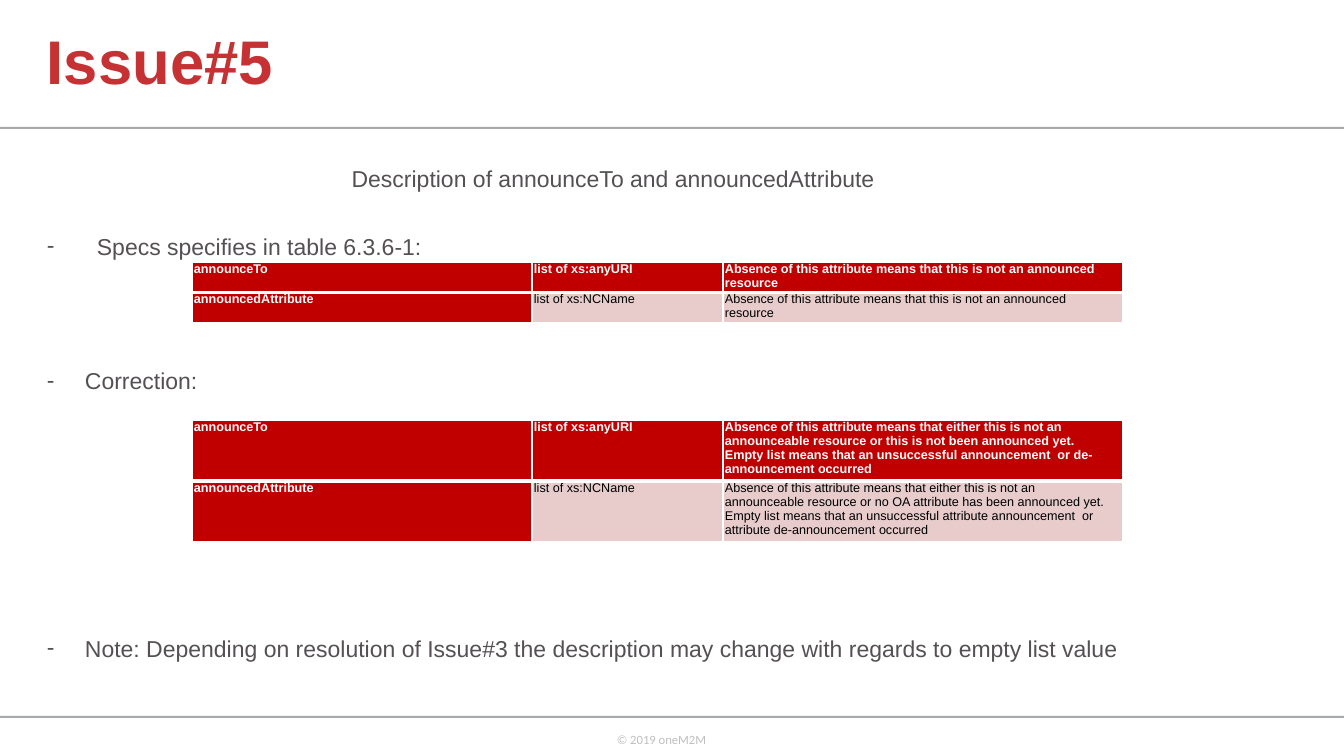
from lxml.etree import SubElement
from pptx import Presentation
from pptx.dml.color import RGBColor
from pptx.enum.shapes import MSO_SHAPE
from pptx.enum.text import MSO_ANCHOR, PP_ALIGN
from pptx.oxml.ns import qn
from pptx.util import Emu, Pt

PX = 914400 / 100.8
TITLE_RED = RGBColor(0xC6, 0x31, 0x33)
CELL_RED = RGBColor(0xC0, 0x00, 0x00)
PINK = RGBColor(0xE8, 0xCC, 0xCC)
WHITE = RGBColor(0xFF, 0xFF, 0xFF)
BLACK = RGBColor(0x00, 0x00, 0x00)
TEXT_GREY = RGBColor(0x54, 0x50, 0x54)
RULE_GREY = RGBColor(0xA7, 0xA9, 0xAC)
FOOTER_GREY = RGBColor(0xBF, 0xBF, 0xBF)


def px(*lengths):
    """Turn pixel lengths into a list of EMU lengths."""
    return [Emu(round(n * PX)) for n in lengths]


def style(p, size, color, bold=False, name="Arial"):
    for r in p.runs:
        r.font.size = Pt(size)
        r.font.name = name
        r.font.bold = bold
        r.font.color.rgb = color


prs = Presentation()
prs.slide_width, prs.slide_height = px(1344, 756)
s = prs.slides.add_slide(prs.slide_layouts[6])

# Rules and footer
for top in (127, 716):
    rule = s.shapes.add_shape(MSO_SHAPE.RECTANGLE, *px(0, top, 1344, 2))
    rule.shadow.inherit = False
    rule.fill.solid()
    rule.fill.fore_color.rgb = RULE_GREY
    rule.line.fill.background()

footer = s.shapes.add_textbox(*px(607, 727, 129, 40))
footer.text_frame.word_wrap = False
footer.text_frame.text = "© 2019 oneM2M"
style(footer.text_frame.paragraphs[0], 9, FOOTER_GREY, name="Calibri")

# Title
title = s.shapes.add_textbox(*px(37, 0, 865, 129))
tf = title.text_frame
tf.word_wrap = True
tf.vertical_anchor = MSO_ANCHOR.MIDDLE
tf.text = "Issue#5"
tf.paragraphs[0].line_spacing = 0.9
style(tf.paragraphs[0], 44, TITLE_RED, bold=True)

# Body: each bullet sits a whole number of line steps below the one before
LINE, STEP = 15.8, 23.8
bullets = [
    (2, 50, "Specs specifies in table 6.3.6-1:"),
    (4, 38, "Correction:"),
    (8, 38, "Note: Depending on resolution of Issue#3 the description may "
            "change with regards to empty list value"),
]
body = s.shapes.add_textbox(*px(37, 164, 1159, 510))
tf = body.text_frame
tf.word_wrap = True
tf.text = "Description of announceTo and announcedAttribute "
tf.paragraphs[0].alignment = PP_ALIGN.CENTER
for steps, indent, text in bullets:
    p = tf.add_paragraph()
    p.text = text
    pPr = p._p.get_or_add_pPr()
    hang = px(indent)[0]
    pPr.set("marL", str(hang))
    pPr.set("indent", str(-hang))
    SubElement(pPr, qn("a:buFont"), typeface="Arial")
    SubElement(pPr, qn("a:buChar"), char="-")
    p.space_before = Pt(round(steps * STEP - LINE, 1))
for p in tf.paragraphs:
    p.line_spacing = 0.84
    style(p, 16.4, TEXT_GREY)

# Attribute tables
COLUMNS = px(340, 191, 400)
NAMES = [("announceTo", "list of xs:anyURI"),
         ("announcedAttribute", "list of xs:NCName")]
absent = "Absence of this attribute means that "
tables = [
    (262, 30, [absent + "this is not an announced resource"] * 2),
    (420, 61, [
        absent + "either this is not an announceable resource or this is not "
        "been announced yet. Empty list means that an unsuccessful "
        "announcement  or de-announcement occurred",
        absent + "either this is not an announceable resource or no OA "
        "attribute has been announced yet. Empty list means that an "
        "unsuccessful attribute announcement  or attribute de-announcement "
        "occurred"]),
]
for top, height, meanings in tables:
    frame = s.shapes.add_table(2, 3, *px(192, top, 931, 2 * height))
    table = frame.table
    table.horz_banding = False
    for column, width in zip(table.columns, COLUMNS):
        column.width = width
    for i, (names, meaning) in enumerate(zip(NAMES, meanings)):
        table.rows[i].height = px(height)[0]
        for j, text in enumerate((*names, meaning)):
            cell = table.cell(i, j)
            heading = i == 0 or j == 0
            cell.margin_left, cell.margin_right = px(2, 7)
            cell.margin_top = cell.margin_bottom = 0
            cell.text = text
            style(cell.text_frame.paragraphs[0], 9,
                  WHITE if heading else BLACK, bold=heading)
            tcPr = cell._tc.get_or_add_tcPr()
            for side in "LRTB":
                thick = (i, side) in ((0, "B"), (1, "T"))
                ln = SubElement(tcPr, qn("a:ln" + side),
                                w=str(Pt(3 if thick else 1)))
                fill = SubElement(ln, qn("a:solidFill"))
                SubElement(fill, qn("a:srgbClr"), val=str(WHITE))
            cell.fill.solid()
            cell.fill.fore_color.rgb = CELL_RED if heading else PINK

prs.save("out.pptx")
